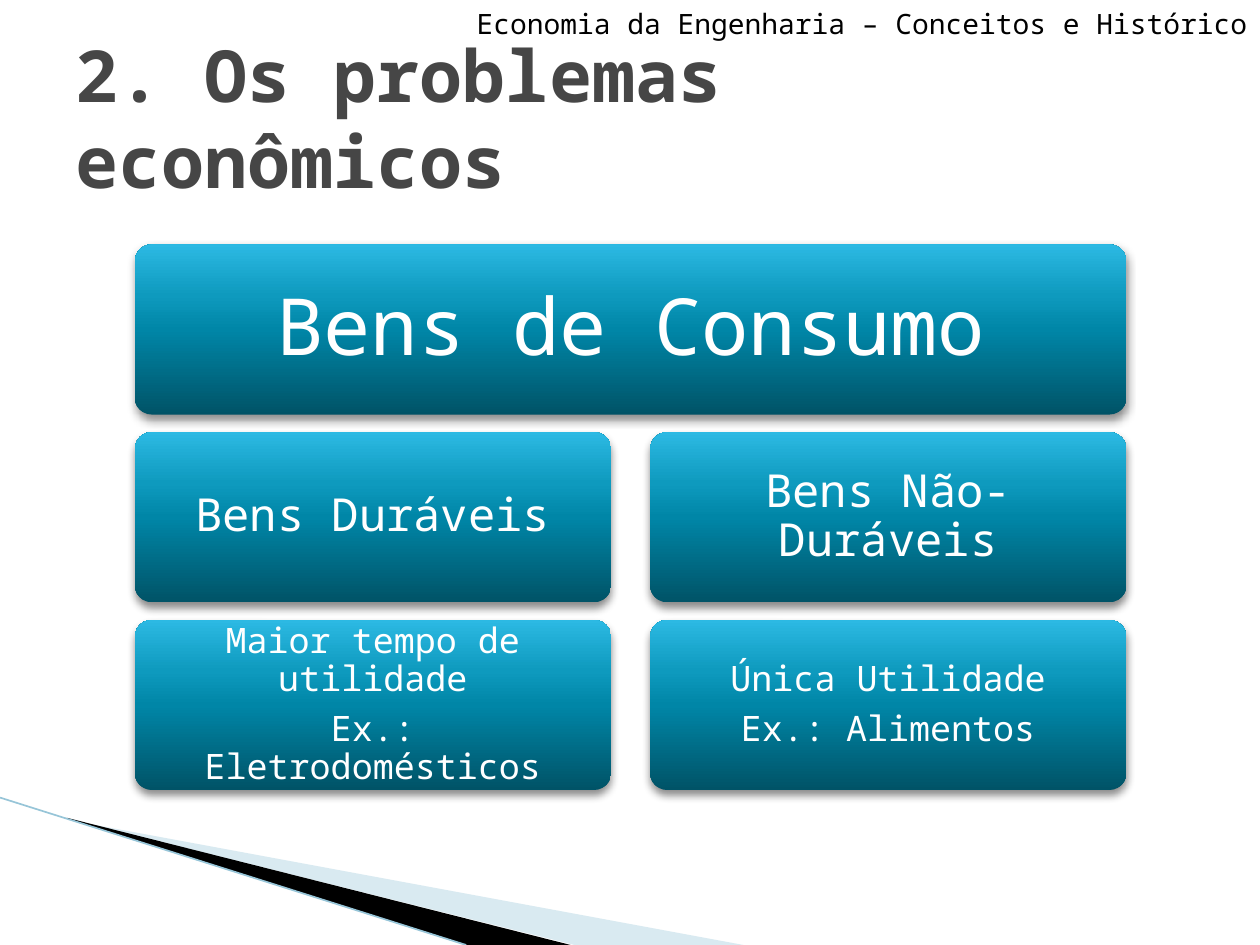
"""Build the slide on consumer goods as a three-row hierarchy of rounded boxes."""
import pptx
import pptx.dml.color
import pptx.enum.shapes
import pptx.enum.text
import pptx.oxml
import pptx.oxml.ns
import pptx.util

Inches = pptx.util.Inches
Pt = pptx.util.Pt
RGBColor = pptx.dml.color.RGBColor
ALIGN = pptx.enum.text.PP_ALIGN
ANCHOR = pptx.enum.text.MSO_ANCHOR

FONT = "Noto Sans Mono"
WHITE = RGBColor(0xFF, 0xFF, 0xFF)
BLACK = RGBColor(0, 0, 0)
GRAY = RGBColor(0x46, 0x46, 0x46)
PALE_BLUE = RGBColor(0xA0, 0xCB, 0xDC)
EDGE_BLUE = RGBColor(0x97, 0xC5, 0xD8)
GRADIENT = [
    (0, RGBColor(0x00, 0x53, 0x67)),
    (50, RGBColor(0x00, 0x86, 0xA7)),
    (70, RGBColor(0x0E, 0x9A, 0xBE)),
    (100, RGBColor(0x2C, 0xB9, 0xE3)),
]
NAMESPACE = pptx.oxml.ns.nsdecls("a")

LEFT, TOP = 1.07, 1.94
COLUMN_WIDTH, COLUMN_STEP = 3.78, 4.09
ROW_HEIGHT, ROW_STEP = 1.35, 1.49


def write(frame, lines, align, anchor, size, color, bold=False, spacing=None, after=None):
    frame.word_wrap = True
    frame.vertical_anchor = anchor
    for index, line in enumerate(lines):
        para = frame.paragraphs[0] if index == 0 else frame.add_paragraph()
        for name, value in {"alignment": align, "line_spacing": spacing, "space_after": after}.items():
            setattr(para, name, value)
        span = para.add_run()
        span.text = line
        for name, value in {"name": FONT, "size": Pt(size), "bold": bold}.items():
            setattr(span.font, name, value)
        span.font.color.rgb = color


def append_xml(shape, xml):
    element = pptx.oxml.parse_xml(xml)
    shape._element.spPr.append(element)
    return element


deck = pptx.Presentation()
deck.slide_width, deck.slide_height = Inches(10), Inches(7.5)
page = deck.slides.add_slide(deck.slide_layouts[5])

wedges = [
    ([(0.55, 6.51), (5.9, 7.5), (4.56, 7.5), (0.55, 6.5)], PALE_BLUE, 40),
    ([(0.53, 6.49), (4.53, 7.5), (3.7, 7.5), (0.54, 6.5)], BLACK, 100),
]
for points, color, opacity in wedges:
    corners = [(Inches(x), Inches(y)) for x, y in points]
    builder = page.shapes.build_freeform(*corners[0])
    builder.add_line_segments(corners[1:], close=True)
    wedge = builder.convert_to_shape()
    wedge.shadow.inherit = False
    wedge.line.fill.background()
    wedge.fill.solid()
    wedge.fill.fore_color.rgb = color
    if opacity < 100:
        tone = wedge._element.spPr.find(".//" + pptx.oxml.ns.qn("a:srgbClr"))
        tone.append(pptx.oxml.parse_xml(f'<a:alpha {NAMESPACE} val="{opacity * 1000}"/>'))

edge = page.shapes.add_connector(
    pptx.enum.shapes.MSO_CONNECTOR.STRAIGHT, 0, Inches(6.33), Inches(3.7), Inches(7.5))
edge.line.color.rgb = EDGE_BLUE
edge.line.width = Pt(0.95)
append_xml(edge, f"<a:effectLst {NAMESPACE}/>")

boxes = [
    (0, 0, 2, 45, 0.23, ["Bens de Consumo"]),
    (0, 1, 1, 26, 0.15, ["Bens Duráveis"]),
    (0, 2, 1, 20, 0.12, ["Maior tempo de utilidade", "Ex.: Eletrodomésticos"]),
    (1, 1, 1, 26, 0.15, ["Bens Não-Duráveis"]),
    (1, 2, 1, 20, 0.12, ["Única Utilidade", "Ex.: Alimentos"]),
]
stops = "".join(
    f'<a:gs pos="{share * 1000}"><a:srgbClr val="{color}"/></a:gs>' for share, color in GRADIENT)
for column, row, columns, size, inset, lines in boxes:
    box = page.shapes.add_shape(
        pptx.enum.shapes.MSO_SHAPE.ROUNDED_RECTANGLE,
        Inches(LEFT + column * COLUMN_STEP), Inches(TOP + row * ROW_STEP),
        Inches(COLUMN_WIDTH + (columns - 1) * COLUMN_STEP), Inches(ROW_HEIGHT))
    box.adjustments[0] = 0.1
    append_xml(box, f'<a:gradFill {NAMESPACE} rotWithShape="1"><a:gsLst>{stops}</a:gsLst>'
                    '<a:lin ang="16200000" scaled="0"/></a:gradFill>')
    box.line.fill.background()
    append_xml(box, f'<a:effectLst {NAMESPACE}><a:outerShdw blurRad="{Pt(5)}" dist="{Pt(3)}" '
                    'dir="5400000" rotWithShape="0"><a:srgbClr val="000000">'
                    '<a:alpha val="45000"/></a:srgbClr></a:outerShdw></a:effectLst>')
    for side in ("left", "top", "right", "bottom"):
        setattr(box.text_frame, f"margin_{side}", Inches(inset))
    write(box.text_frame, lines, ALIGN.CENTER, ANCHOR.MIDDLE, size, WHITE,
          spacing=0.9, after=Pt(0.35 * size))

title = page.shapes.title
for name, value in {"left": 0.5, "top": 0.3, "width": 9, "height": 1.25}.items():
    setattr(title, name, Inches(value))
title.text_frame.auto_size = pptx.enum.text.MSO_AUTO_SIZE.NONE
write(title.text_frame, ["2. Os problemas econômicos"], ALIGN.LEFT, ANCHOR.MIDDLE, 41, GRAY, bold=True)

header = page.shapes.add_textbox(0, 0, deck.slide_width, Inches(0.37))
write(header.text_frame, ["Economia da Engenharia – Conceitos e Histórico"],
      ALIGN.RIGHT, ANCHOR.TOP, 16, BLACK)
header.text_frame.auto_size = pptx.enum.text.MSO_AUTO_SIZE.SHAPE_TO_FIT_TEXT

deck.save("out.pptx")
